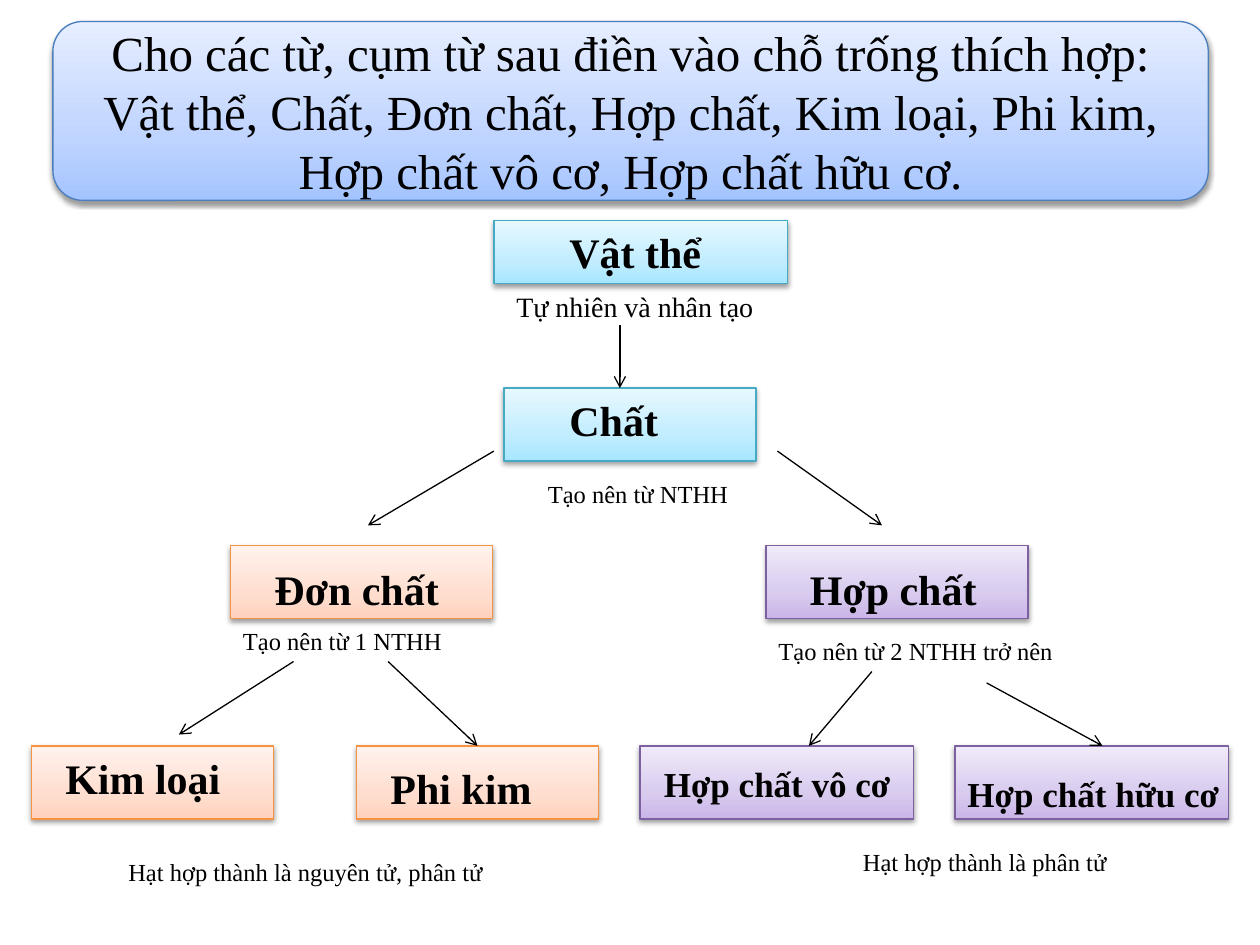
from copy import deepcopy
from typing import NamedTuple, Optional

from lxml.etree import SubElement
from pptx import Presentation
from pptx.dml.color import RGBColor
from pptx.enum.shapes import MSO_CONNECTOR, MSO_SHAPE
from pptx.enum.text import MSO_ANCHOR, MSO_AUTO_SIZE, PP_ALIGN
from pptx.oxml.ns import qn
from pptx.util import Inches, Pt

FONT = "Times New Roman"
COLORS = {"text": "000000", "arrow": "000000", "shadow": "000000"}
# Gradient stops from bottom to top, then the outline
THEMES = {
    "blue": (("A4C4FF", "BFD4FF", "E6EEFF"), "4B7EBC"),
    "cyan": (("A7E6FF", "C1EDFF", "E7F8FF"), "46AAC5"),
    "orange": (("FFD2BD", "FFDED0", "FFF2ED"), "F69240"),
    "purple": (("C9B5E8", "D8CBEE", "F0EAF9"), "7D60A0"),
}
STOP_POSITIONS = (0, 0.35, 1)
LEAF_TOP = 5.92
BOX_HEIGHT = 0.58


class Box(NamedTuple):
    left: float
    top: float
    width: float
    height: float
    theme: str


class Label(NamedTuple):
    text: str
    left: float
    top: float
    width: float
    height: float
    size: int
    bold: bool = False
    wrap: bool = False


class Arrow(NamedTuple):
    start: tuple[float, float]
    end: tuple[float, float]
    target: Optional[str] = None


HEADING = Box(0.42, 0.17, 9.17, 1.42, "blue")
HEADING_TEXT = (
    "Cho các từ, cụm từ sau điền vào chỗ trống thích hợp: "
    "Vật thể, Chất, Đơn chất, Hợp chất, Kim loại, Phi kim, "
    "Hợp chất vô cơ, Hợp chất hữu cơ."
)

CONCEPT_BOXES = {
    "object": Box(3.92, 1.75, 2.33, 0.5, "cyan"),
    "substance": Box(4, 3.08, 2, BOX_HEIGHT, "cyan"),
    "element": Box(1.83, 4.33, 2.08, BOX_HEIGHT, "orange"),
    "compound": Box(6.08, 4.33, 2.08, BOX_HEIGHT, "purple"),
    "metal": Box(0.25, LEAF_TOP, 1.92, BOX_HEIGHT, "orange"),
    "nonmetal": Box(2.83, LEAF_TOP, 1.92, BOX_HEIGHT, "orange"),
    "inorganic": Box(5.08, LEAF_TOP, 2.17, BOX_HEIGHT, "purple"),
    "organic": Box(7.58, LEAF_TOP, 2.17, BOX_HEIGHT, "purple"),
}

ARROWS = [
    Arrow((4.92, 2.58), (4.92, 3.08)),
    Arrow((3.92, 3.58), (2.92, 4.17)),
    Arrow((6.17, 3.58), (7, 4.17)),
    Arrow((2.33, 5.25), (1.42, 5.83)),
    Arrow((3.08, 5.25), (3.79, LEAF_TOP), "nonmetal"),
    Arrow((6.92, 5.33), (6.42, LEAF_TOP)),
    Arrow((7.83, 5.42), (8.75, LEAF_TOP)),
]

LABELS = [
    Label("Tự nhiên và nhân tạo", 4, 2.25, 2.11, 0.37, 16),
    Label("Tạo nên từ NTHH", 4.25, 3.75, 1.64, 0.34, 14),
    Label("Tạo nên từ 1 NTHH", 1.83, 4.92, 1.79, 0.34, 14),
    Label("Tạo nên từ 2 NTHH trở nên", 6.08, 5, 2.4, 0.34, 14),
    Label("Hạt hợp thành là nguyên tử, phân tử", 0.92, 6.75, 3.04, 0.34, 14),
    Label("Hạt hợp thành là phân tử", 6.75, 6.67, 2.15, 0.34, 14),
    Label("Vật thể", 4.42, 1.75, 1.26, 0.5, 24, True),
    Label("Chất", 4.42, 3.08, 1.42, 0.5, 24, True, True),
    Label("Đơn chất", 2.08, 4.42, 1.52, 0.5, 24, True),
    Label("Hợp chất", 6.33, 4.42, 1.54, 0.5, 24, True),
    Label("Kim loại", 0.42, 5.92, 1.52, 0.5, 24, True, True),
    Label("Phi kim", 3, 6, 1.52, 0.5, 24, True, True),
    Label("Hợp chất vô cơ", 5.17, 6, 2.08, 0.44, 20, True, True),
    Label("Hợp chất hữu cơ", 7.58, 6.08, 2.42, 0.44, 20, True, True),
]


def rgb(name: str) -> RGBColor:
    return RGBColor.from_string(COLORS[name])


def format_text(frame, text: str, size: int, bold: bool = False) -> None:
    frame.text = text
    font = frame.paragraphs[0].runs[0].font
    font.name = FONT
    font.size = Pt(size)
    font.bold = bold
    font.color.rgb = rgb("text")


def apply_gradient(shape, stop_colors: tuple[str, ...]) -> None:
    """Fill upwards, adding the third stop to the default pair."""
    fill = shape.fill
    fill.gradient()
    fill.gradient_angle = 90
    stop_list = shape.element.spPr.find(f".//{qn('a:gsLst')}")
    stop_list.append(deepcopy(stop_list[0]))
    for stop, position, color in zip(fill.gradient_stops, STOP_POSITIONS, stop_colors):
        stop.position = position
        stop.color.rgb = RGBColor.from_string(color)


def apply_shadow(shape) -> None:
    shape.shadow.inherit = False
    effects = shape.element.spPr.find(qn("a:effectLst"))
    outer = SubElement(
        effects, qn("a:outerShdw"), blurRad=str(Pt(3.1)), dist=str(Pt(1.6)),
        dir="5400000", rotWithShape="0",
    )
    color = SubElement(outer, qn("a:srgbClr"), val=COLORS["shadow"])
    SubElement(color, qn("a:alpha"), val="38000")


def draw_box(slide, box: Box, geometry=MSO_SHAPE.RECTANGLE):
    shape = slide.shapes.add_shape(geometry, *(Inches(length) for length in box[:4]))
    stop_colors, outline = THEMES[box.theme]
    apply_gradient(shape, stop_colors)
    shape.line.color.rgb = RGBColor.from_string(outline)
    shape.line.width = Pt(0.75)
    apply_shadow(shape)
    return shape


def draw_heading(slide) -> None:
    heading = draw_box(slide, HEADING, MSO_SHAPE.ROUNDED_RECTANGLE)
    frame = heading.text_frame
    frame.word_wrap = True
    frame.vertical_anchor = MSO_ANCHOR.MIDDLE
    format_text(frame, HEADING_TEXT, 28)
    frame.paragraphs[0].alignment = PP_ALIGN.CENTER


def draw_arrow(slide, arrow: Arrow, concepts: dict) -> None:
    ends = (Inches(length) for length in arrow.start + arrow.end)
    connector = slide.shapes.add_connector(MSO_CONNECTOR.STRAIGHT, *ends)
    if arrow.target:
        connector.end_connect(concepts[arrow.target], 0)
    connector.line.color.rgb = rgb("arrow")
    connector.line.width = Pt(0.75)
    properties = connector.element.spPr
    SubElement(properties.find(qn("a:ln")), qn("a:tailEnd"), type="arrow")
    SubElement(properties, qn("a:effectLst"))


def draw_label(slide, label: Label) -> None:
    bounds = (label.left, label.top, label.width, label.height)
    textbox = slide.shapes.add_textbox(*(Inches(length) for length in bounds))
    frame = textbox.text_frame
    frame.word_wrap = label.wrap
    frame.auto_size = MSO_AUTO_SIZE.SHAPE_TO_FIT_TEXT
    format_text(frame, label.text, label.size, label.bold)


def main() -> None:
    presentation = Presentation()
    presentation.slide_width = Inches(10)
    presentation.slide_height = Inches(7.5)
    slide = presentation.slides.add_slide(presentation.slide_layouts[6])

    draw_heading(slide)
    concepts = {key: draw_box(slide, box) for key, box in CONCEPT_BOXES.items()}
    for arrow in ARROWS:
        draw_arrow(slide, arrow, concepts)
    for label in LABELS:
        draw_label(slide, label)

    presentation.save("out.pptx")


if __name__ == "__main__":
    main()
